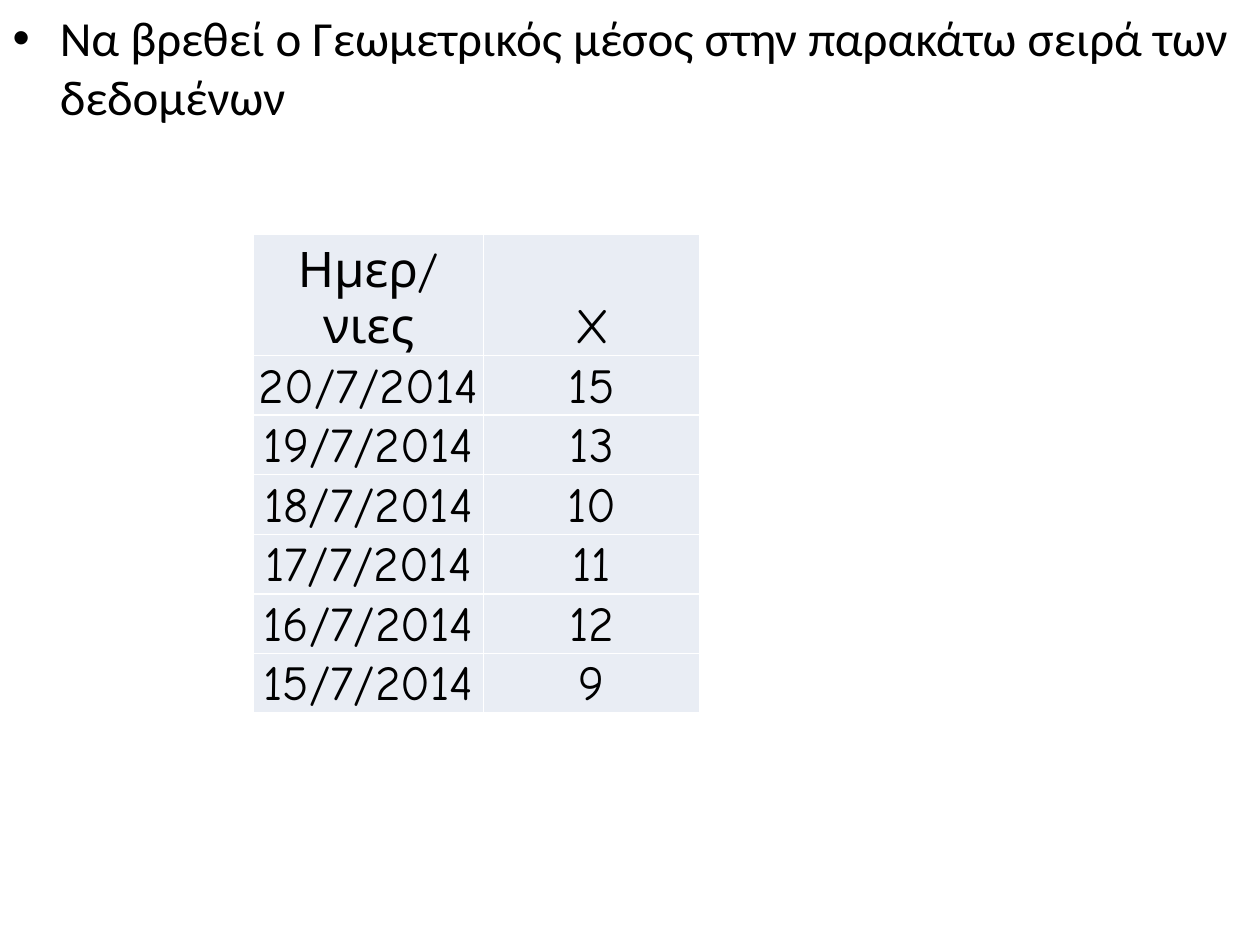
import pptx
import pptx.util
import pptx.dml.color
import pptx.enum.text

Cm = pptx.util.Cm
Pt = pptx.util.Pt
BLACK = pptx.dml.color.RGBColor(0x00, 0x00, 0x00)
PALE = pptx.dml.color.RGBColor(0xE9, 0xED, 0xF4)

deck = pptx.Presentation()
deck.slide_width = Cm(25.4)
deck.slide_height = Cm(19.05)
slide = deck.slides.add_slide(deck.slide_layouts[1])
title = slide.shapes.title.element
title.getparent().remove(title)


def style(para, face):
    para.font.size = Pt(28)
    para.font.name = face
    para.font.color.rgb = BLACK


task = slide.placeholders[1]
task.left, task.top = Cm(0), Cm(0.03)
task.width, task.height = Cm(25.4), Cm(3.12)
frame = task.text_frame
frame.text = "Να βρεθεί ο Γεωμετρικός μέσος στην παρακάτω σειρά των δεδομένων"
frame.auto_size = pptx.enum.text.MSO_AUTO_SIZE.NONE
style(frame.paragraphs[0], "Calibri")

data = [("Ημερ/νιες", "X")]
for day, value in zip(range(20, 14, -1), (15, 13, 10, 11, 12, 9)):
    data.append((f"{day}/7/2014", str(value)))

table = slide.shapes.add_table(
    len(data), 2, Cm(5.11), Cm(4.73), Cm(9), Cm(9.64)).table
table.first_row = False
table.horz_banding = False
table.columns[0].width = Cm(4.64)
table.columns[1].width = Cm(4.36)

for row, texts in zip(table.rows, data):
    row.height = Cm(2.44 if texts is data[0] else 1.2)
    for cell, text in zip(row.cells, texts):
        cell.text = text
        cell.fill.solid()
        cell.fill.fore_color.rgb = PALE
        cell.vertical_anchor = pptx.enum.text.MSO_ANCHOR.BOTTOM
        cell.margin_left = cell.margin_right = cell.margin_top = Cm(0.03)
        cell.margin_bottom = Cm(0)
        para = cell.text_frame.paragraphs[0]
        para.alignment = pptx.enum.text.PP_ALIGN.CENTER
        style(para, "Comic Neue")

deck.save("out.pptx")
